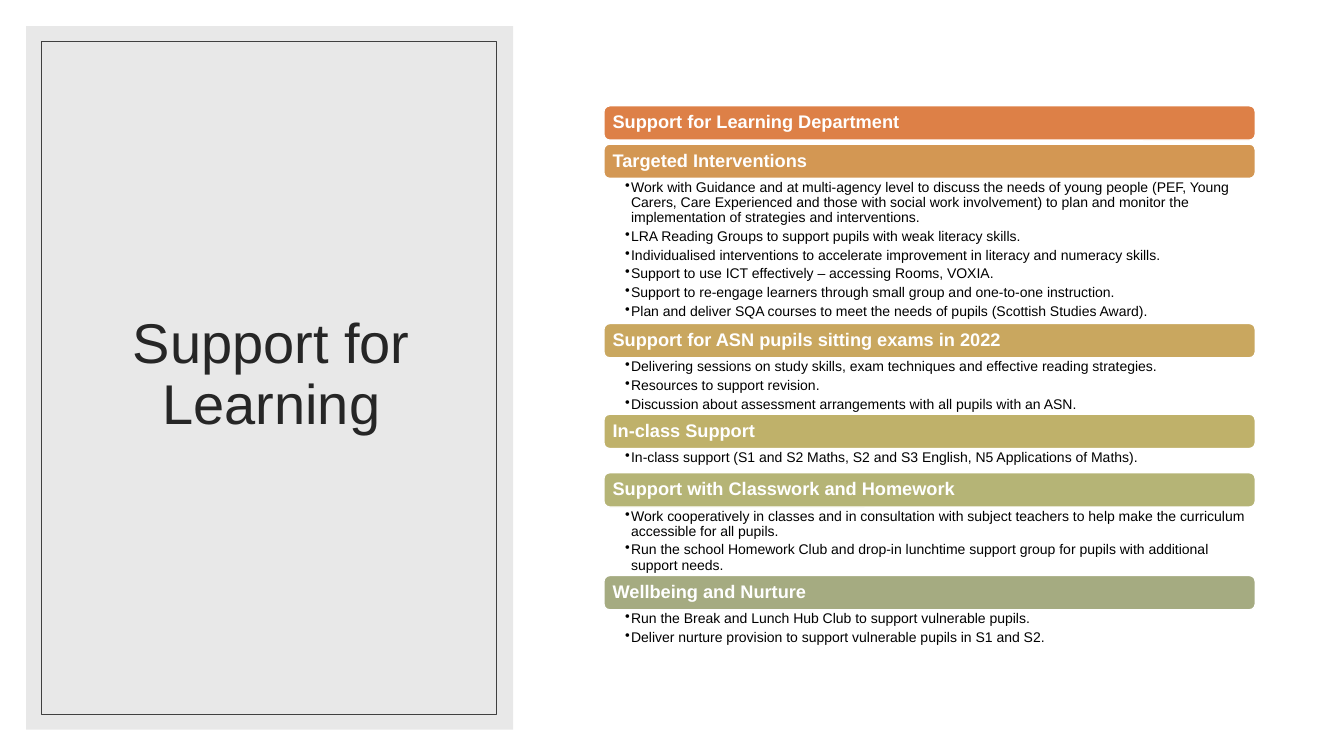
from pptx import Presentation
from pptx.dml.color import RGBColor
from pptx.enum.shapes import MSO_SHAPE
from pptx.enum.text import MSO_ANCHOR, MSO_AUTO_SIZE, PP_ALIGN
from pptx.oxml import parse_xml
from pptx.oxml.ns import nsdecls
from pptx.util import Inches, Pt

FONT = "Arial"
WHITE = RGBColor(0xFF, 0xFF, 0xFF)
BLACK = RGBColor(0x00, 0x00, 0x00)
INK = RGBColor(0x26, 0x26, 0x26)
EDGE = RGBColor(0x40, 0x40, 0x40)
PANEL = RGBColor(0xE8, 0xE8, 0xE8)

LEFT, TOP, WIDTH, BAR = 5.99, 1.05, 6.46, 0.34

TOPICS = [
    ("Support for Learning Department", RGBColor(0xDD, 0x80, 0x47), 0.04, []),
    ("Targeted Interventions", RGBColor(0xD3, 0x97, 0x53), 1.44, [
        "Work with Guidance and at multi-agency level to discuss the needs of young people "
        "(PEF, Young Carers, Care Experienced and those with social work involvement) to plan "
        "and monitor the implementation of strategies and interventions.",
        "LRA Reading Groups to support pupils with weak literacy skills.",
        "Individualised interventions to accelerate improvement in literacy and numeracy skills.",
        "Support to use ICT effectively – accessing Rooms, VOXIA.",
        "Support to re-engage learners through small group and one-to-one instruction.",
        "Plan and deliver SQA courses to meet the needs of pupils (Scottish Studies Award).",
    ]),
    ("Support for ASN pupils sitting exams in 2022", RGBColor(0xC9, 0xA7, 0x5F), 0.56, [
        "Delivering sessions on study skills, exam techniques and effective reading strategies.",
        "Resources to support revision.",
        "Discussion about assessment arrangements with all pupils with an ASN.",
    ]),
    ("In-class Support", RGBColor(0xBF, 0xB1, 0x6A), 0.24, [
        "In-class support (S1 and S2 Maths, S2 and S3 English, N5 Applications of Maths).",
    ]),
    ("Support with Classwork and Homework", RGBColor(0xB5, 0xB4, 0x76), 0.68, [
        "Work cooperatively in classes and in consultation with subject teachers to help make "
        "the curriculum accessible for all pupils.",
        "Run the school Homework Club and drop-in lunchtime support group for pupils with "
        "additional support needs.",
    ]),
    ("Wellbeing and Nurture", RGBColor(0xA5, 0xAB, 0x81), 0.38, [
        "Run the Break and Lunch Hub Club to support vulnerable pupils.",
        "Deliver nurture provision to support vulnerable pupils in S1 and S2.",
    ]),
]


class Page:
    """Holds the slide and draws each kind of element in one style."""

    def __init__(self, slide):
        self.slide = slide
        self.shapes = slide.shapes

    def shape(self, kind, box, fill=None, line=None, weight=1):
        item = self.shapes.add_shape(kind, *map(Inches, box))
        item.shadow.inherit = False
        if fill is None:
            item.fill.background()
        else:
            item.fill.solid()
            item.fill.fore_color.rgb = fill
        if line is None:
            item.line.fill.background()
        else:
            item.line.color.rgb = line
            item.line.width = Pt(weight)
        return item

    def frame(self, item, insets, anchor):
        frame = item.text_frame
        frame.word_wrap = True
        frame.auto_size = MSO_AUTO_SIZE.NONE
        frame.vertical_anchor = anchor
        (frame.margin_left, frame.margin_top,
         frame.margin_right, frame.margin_bottom) = map(Inches, insets)
        return frame

    def label(self, para, text, size, color, bold=False, align=PP_ALIGN.LEFT):
        para.alignment = align
        para.line_spacing = 0.9
        run = para.add_run()
        run.text = text
        run.font.name = FONT
        run.font.size = Pt(size)
        run.font.bold = bold
        run.font.color.rgb = color

    def title(self, text, box):
        item = self.shapes.title
        item.left, item.top, item.width, item.height = map(Inches, box)
        self.shapes._spTree.append(item._element)
        frame = self.frame(item, (0.1, 0.05, 0.1, 0.05), MSO_ANCHOR.MIDDLE)
        self.label(frame.paragraphs[0], text, 40, INK, align=PP_ALIGN.CENTER)

    def bar(self, text, top, fill):
        item = self.shape(MSO_SHAPE.ROUNDED_RECTANGLE, (LEFT, top, WIDTH, BAR), fill, WHITE)
        frame = self.frame(item, (0.07, 0.05, 0.07, 0.05), MSO_ANCHOR.MIDDLE)
        self.label(frame.paragraphs[0], text, 13, WHITE, bold=True)

    def points(self, lines, top, height):
        item = self.shapes.add_textbox(*map(Inches, (LEFT, top, WIDTH, height)))
        frame = self.frame(item, (0.21, 0.02, 0.1, 0.02), MSO_ANCHOR.TOP)
        for index, text in enumerate(lines):
            para = frame.add_paragraph() if index else frame.paragraphs[0]
            self.label(para, text, 10, BLACK)
            para.space_after = Pt(2.5)
            props = para._p.get_or_add_pPr()
            props.set("marL", str(Inches(0.06)))
            props.set("indent", str(Inches(-0.06)))
            props.append(parse_xml(f'<a:buChar {nsdecls("a")} char="•"/>'))


def main():
    deck = Presentation()
    deck.slide_width, deck.slide_height = Inches(13.33), Inches(7.5)
    page = Page(deck.slides.add_slide(deck.slide_layouts[5]))
    page.shape(MSO_SHAPE.RECTANGLE, (0.26, 0.26, 4.83, 6.98), PANEL)
    page.title("Support for Learning", (0.63, 0.61, 4.12, 6.24))
    page.shape(MSO_SHAPE.RECTANGLE, (0.41, 0.41, 4.51, 6.68), line=EDGE, weight=0.5)
    top = TOP
    for name, fill, height, lines in TOPICS:
        page.bar(name, top, fill)
        if lines:
            page.points(lines, top + BAR, height)
        top += BAR + height
    deck.save("out.pptx")


if __name__ == "__main__":
    main()
